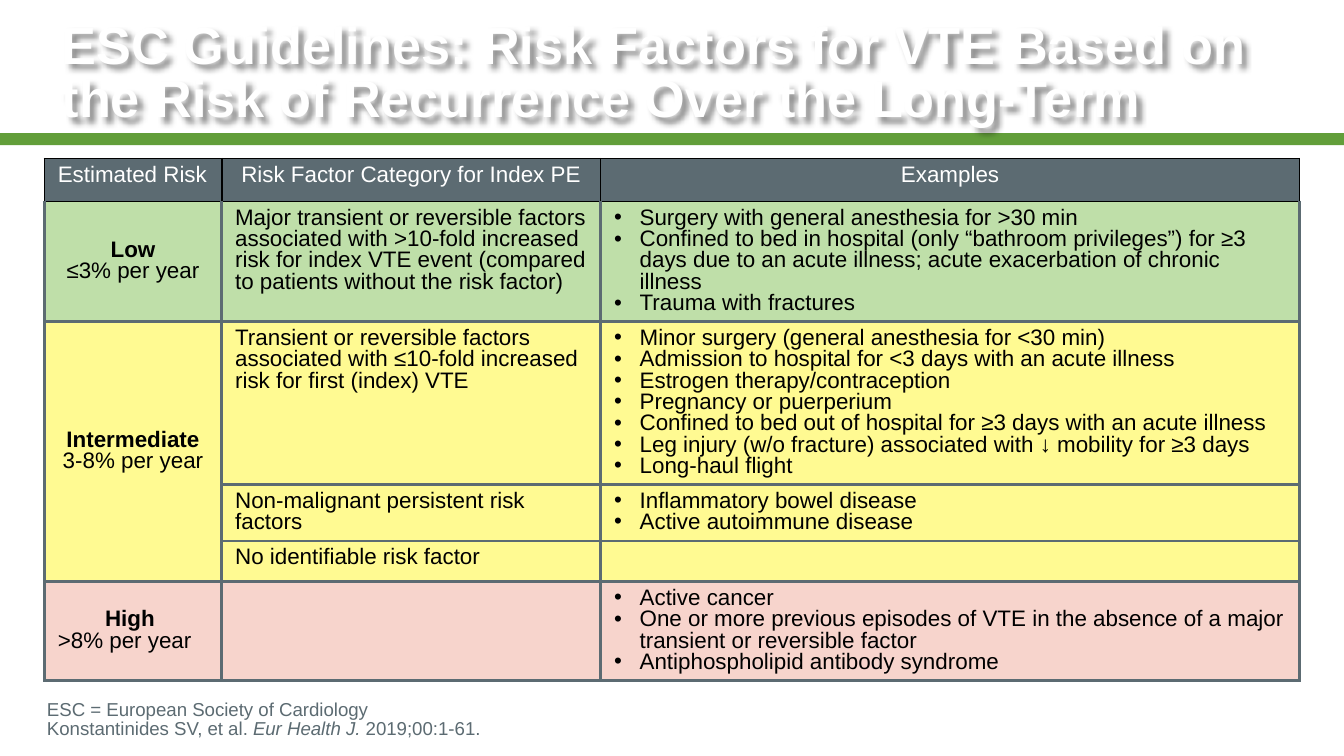
import pptx
import pptx.util
import pptx.dml.color
import pptx.enum.shapes
import pptx.enum.text
import pptx.oxml
import pptx.oxml.ns
from dataclasses import dataclass
from lxml import etree

Inches = pptx.util.Inches
Pt = pptx.util.Pt
ALIGN = pptx.enum.text.PP_ALIGN
ANCHOR = pptx.enum.text.MSO_ANCHOR
qn = pptx.oxml.ns.qn


@dataclass(frozen=True)
class Theme:
    font: str = "Arial"
    title_size: int = 28
    table_size: int = 12
    note_size: int = 10
    line_spacing: float = 0.85
    white: str = "FFFFFF"
    black: str = "000000"
    slate: str = "5C6B72"
    green: str = "629E3A"
    low: str = "BFDFA9"
    middle: str = "FFFA92"
    high: str = "F7D4CC"


THEME = Theme()
COLUMNS = (1.32, 2.82, 5.2)
HEADINGS = ("Estimated Risk", "Risk Factor Category for Index PE", "Examples")
# Each row: height, fill, risk paragraphs, category, examples
ROWS = (
    (0.89, THEME.low, [[("Low", "b"), ("\n", ""), ("≤3% per year", "")]],
     "Major transient or reversible factors associated with >10-fold increased "
     "risk for index VTE event (compared to patients without the risk factor)",
     ["Surgery with general anesthesia for >30 min",
      "Confined to bed in hospital (only “bathroom privileges”) for ≥3 days due "
      "to an acute illness; acute exacerbation of chronic illness",
      "Trauma with fractures"]),
    (1.21, THEME.middle, [[("Intermediate ", "b"), ("3-8% per year", "")]],
     "Transient or reversible factors associated with ≤10-fold increased risk "
     "for first (index) VTE",
     ["Minor surgery (general anesthesia for <30 min)",
      "Admission to hospital for <3 days with an acute illness",
      "Estrogen therapy/contraception",
      "Pregnancy or puerperium",
      "Confined to bed out of hospital for ≥3 days with an acute illness",
      "Leg injury (w/o fracture) associated with ↓ mobility for ≥3 days",
      "Long-haul flight"]),
    (0.42, THEME.middle, [], "Non-malignant persistent risk factors",
     ["Inflammatory bowel disease", "Active autoimmune disease"]),
    (0.29, THEME.middle, [], "No identifiable risk factor", []),
    (0.73, THEME.high, [[("High ", "b")], [(">8% per year", "")]], "",
     ["Active cancer",
      "One or more previous episodes of VTE in the absence of a major transient "
      "or reversible factor",
      "Antiphospholipid antibody syndrome"]),
)


def rgb(color):
    return pptx.dml.color.RGBColor.from_string(color)


def place(shape, box):
    shape.left, shape.top, shape.width, shape.height = map(Inches, box)


def set_margins(frame, left, top, right, bottom):
    frame.margin_left, frame.margin_top = Inches(left), Inches(top)
    frame.margin_right, frame.margin_bottom = Inches(right), Inches(bottom)


def add_bullet(para):
    properties = para._p.get_or_add_pPr()
    properties.set("marL", str(Inches(0.19)))
    properties.set("indent", str(-Inches(0.19)))
    etree.SubElement(properties, qn("a:buFont"), typeface=THEME.font)
    etree.SubElement(properties, qn("a:buChar"), char="•")


def write(frame, paragraphs, size, color, align=ALIGN.LEFT, bullet=False):
    """Fill a frame with paragraphs of (text, style) spans; style is b, i or empty."""
    for index, spans in enumerate(paragraphs):
        para = frame.add_paragraph() if index else frame.paragraphs[0]
        if bullet:
            add_bullet(para)
        para.alignment = align
        para.line_spacing = THEME.line_spacing
        for text, style in spans:
            if text == "\n":
                para.add_line_break()
                continue
            span = para.add_run()
            span.text = text
            span.font.name, span.font.size = THEME.font, Pt(size)
            span.font.color.rgb = rgb(color)
            span.font.bold, span.font.italic = style == "b", style == "i"
    if not paragraphs:
        etree.SubElement(frame.paragraphs[0]._p, qn("a:endParaRPr"), sz=str(size * 100))


def add_text_shadow(shape):
    shape._element.spPr.append(pptx.oxml.parse_xml(
        f'<a:effectLst {pptx.oxml.ns.nsdecls("a")}>'
        '<a:outerShdw blurRad="38100" dist="38100" dir="2700000" algn="tl" rotWithShape="0">'
        f'<a:srgbClr val="{THEME.black}"><a:alpha val="43000"/></a:srgbClr>'
        '</a:outerShdw></a:effectLst>'))


def add_header(page, box):
    left, top, width, height = box
    bar = page.shapes.add_shape(pptx.enum.shapes.MSO_SHAPE.RECTANGLE, 0, 0, 0, 0)
    place(bar, (left, top + height - 0.09, width, 0.09))
    bar.shadow.inherit = False
    bar.fill.solid()
    bar.fill.fore_color.rgb = rgb(THEME.green)
    bar.line.fill.background()
    page.shapes._spTree.insert(2, bar._element)  # behind the title

    title = page.shapes.title
    place(title, (left + 0.46, top + 0.11, 9.09, 0.9))
    frame = title.text_frame
    frame.word_wrap = True
    frame.auto_size = pptx.enum.text.MSO_AUTO_SIZE.NONE
    frame.vertical_anchor = ANCHOR.MIDDLE
    set_margins(frame, 0, 0.05, 0.1, 0.05)
    write(frame, [[("ESC Guidelines: Risk Factors for VTE Based on the Risk of "
                    "Recurrence Over the Long-Term", "b")]],
          THEME.title_size, THEME.white)
    add_text_shadow(title)


def style_cell(cell, fill, edge, top_edge):
    """Fill a cell and draw its four borders; an edge is (colour, points)."""
    cell.fill.solid()
    cell.fill.fore_color.rgb = rgb(fill)
    properties = cell._tc.get_or_add_tcPr()
    sides = (("lnL", edge), ("lnR", edge), ("lnT", top_edge), ("lnB", edge))
    for index, (side, (color, points)) in enumerate(sides):
        line = etree.Element(qn(f"a:{side}"), w=str(Pt(points)))
        paint = etree.SubElement(line, qn("a:solidFill"))
        etree.SubElement(paint, qn("a:srgbClr"), val=color)
        properties.insert(index, line)


def add_risk_table(page, box):
    table = page.shapes.add_table(len(ROWS) + 1, len(COLUMNS), *map(Inches, box)).table
    for column, width in zip(table.columns, COLUMNS):
        column.width = Inches(width)
    for row, height in zip(table.rows, (0.32, *(entry[0] for entry in ROWS))):
        row.height = Inches(height)

    black_edge, slate_edge = (THEME.black, 1), (THEME.slate, 1.5)
    for column, heading in enumerate(HEADINGS):
        cell = table.cell(0, column)
        write(cell.text_frame, [[(heading, "")]], THEME.table_size, THEME.white,
              ALIGN.CENTER if column else ALIGN.LEFT)
        style_cell(cell, THEME.slate, black_edge, black_edge)

    for index, (_, fill, risk, category, examples) in enumerate(ROWS, start=1):
        cells = [table.cell(index, column) for column in range(len(COLUMNS))]
        contents = (risk, [[(category, "")]] if category else [],
                    [[(example, "")] for example in examples])
        for column, (cell, content) in enumerate(zip(cells, contents)):
            write(cell.text_frame, content, THEME.table_size, THEME.black,
                  ALIGN.LEFT if column else ALIGN.CENTER, bullet=column == 2)
            style_cell(cell, fill, slate_edge, black_edge if index == 1 else slate_edge)
        cells[0].vertical_anchor = ANCHOR.MIDDLE
    table.cell(len(ROWS), 0).text_frame.paragraphs[-1].alignment = ALIGN.LEFT
    table.cell(2, 0).merge(table.cell(4, 0))


def add_source_note(page, box):
    frame = page.shapes.add_textbox(*map(Inches, box)).text_frame
    frame.word_wrap = True
    frame.vertical_anchor = ANCHOR.BOTTOM
    set_margins(frame, 0.35, 0, 0, 0.13)
    write(frame, [[("ESC = European Society of Cardiology", ""), ("\n", ""),
                   ("Konstantinides SV, et al. ", ""), ("Eur Health J.", "i"),
                   (" 2019;00:1-61.", "")]], THEME.note_size, THEME.slate)


def main():
    deck = pptx.Presentation()
    deck.slide_width, deck.slide_height = Inches(10), Inches(10 * 9 / 16)
    page = deck.slides.add_slide(deck.slide_layouts.get_by_name("Title Only"))
    add_header(page, (0, 0, 10, 1.08))
    add_risk_table(page, (0.33, 1.18, sum(COLUMNS), 3.86))
    add_source_note(page, (0, 5.1, 10, 0.53))
    deck.save("out.pptx")


if __name__ == "__main__":
    main()
